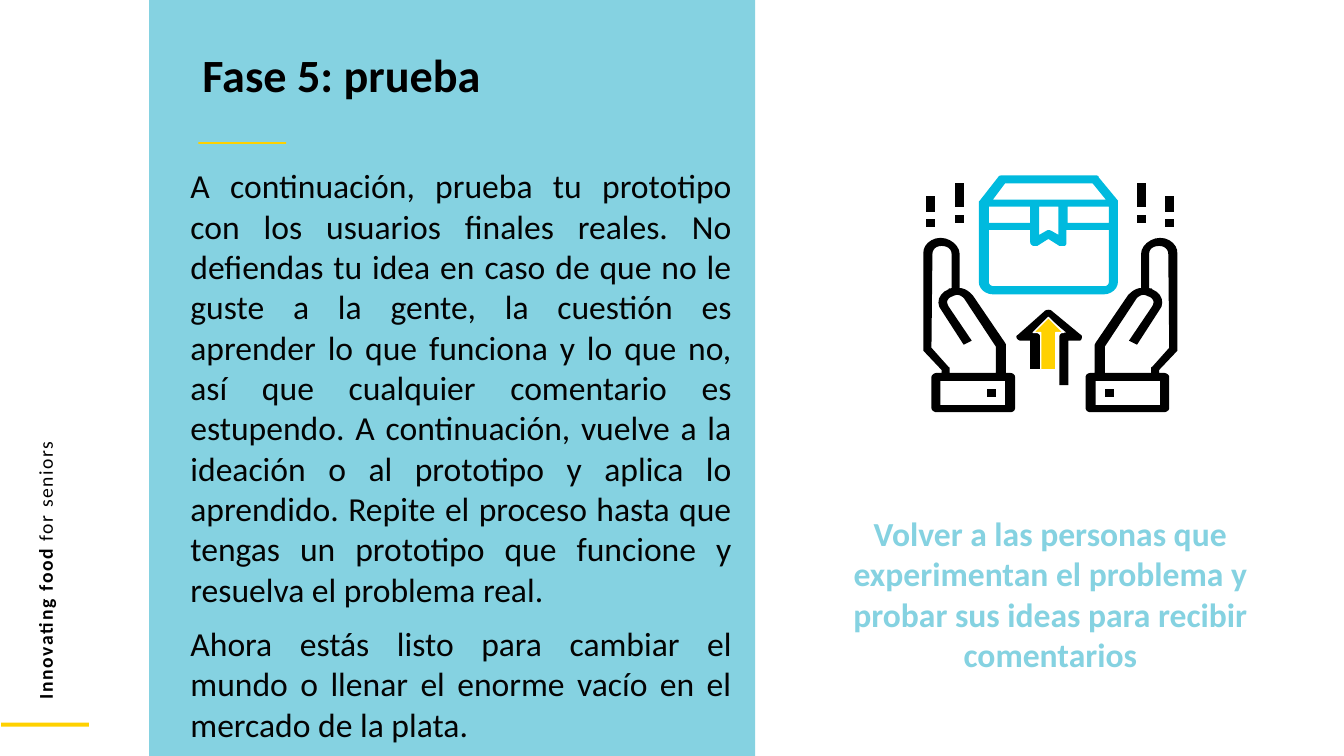
from dataclasses import dataclass

from pptx import Presentation
from pptx import util as u
from pptx.dml.color import RGBColor
from pptx.enum import shapes, text


@dataclass(frozen=True)
class Theme:
    font: str = "Calibri"
    black: str = "000000"
    ink: str = "030303"
    white: str = "FFFFFF"
    aqua: str = "85D2E1"
    cyan: str = "00BADE"
    yellow: str = "FFD100"
    title: int = 33
    body: int = 24
    side: int = 14


# Icon outlines: x from the icon axis, y from its top, in units of UNIT.
# A pair is a corner; six numbers are a Bézier curve (two controls, end).
UNIT = u.Cm(0.0254)
ICON_X, ICON_Y = u.Cm(26.47), u.Cm(4.42)
CURVE_STEPS = 6


def rect(left, top, right, bottom):
    return [(left, top), (right, top), (right, bottom), (left, bottom)]


BOX = [
    [(67, 25), (48, 2), (48, 0, 46, 0, 44, 0), (-48, 0), (-49, 0, -51, 0, -52, 2),
     (-70, 25), (-71, 26, -71, 26, -71, 27), (-71, 106),
     (-71, 112, -65, 118, -57, 118), (53, 118), (61, 118, 67, 112, 67, 106), (67, 27)],
    [(-45, 8), (42, 8), (55, 24), (-57, 24)],
    [(8, 31), (8, 59), (1, 55), (-1, 54, -3, 54, -4, 55), (-11, 59), (-11, 31)],
    rect(-61, 31, -20, 47),
    rect(17, 31, 58, 47),
    [(58, 106), (58, 108, 56, 110, 54, 110), (-56, 110),
     (-59, 110, -61, 108, -61, 106), (-61, 54), (-20, 54), (-20, 66),
     (-20, 68, -19, 69, -17, 70), (-16, 70, -14, 70, -13, 70), (-2, 63), (9, 70),
     (11, 70, 12, 70, 14, 70), (16, 69, 16, 68, 16, 66), (16, 54), (58, 54)],
]
ARROW = [
    [(1, 134), (0, 133, -3, 133, -5, 134), (-32, 158), (-34, 159, -34, 160, -33, 162),
     (-32, 163, -31, 164, -29, 164), (-20, 164), (-20, 192), (-10, 192), (-10, 160),
     (-10, 158, -13, 156, -15, 156), (-17, 156), (-1, 142), (16, 156), (13, 156),
     (11, 156, 9, 158, 9, 160), (9, 208), (18, 208), (18, 164), (27, 164),
     (29, 164, 31, 164, 31, 162), (32, 160, 31, 158, 30, 158)],
]
HAND = [
    [(109, 62), (99, 62, 90, 70, 90, 78), (90, 112), (88, 112),
     (83, 113, 80, 116, 77, 119), (45, 166), (44, 168), (44, 196), (40, 196),
     (37, 196, 35, 198, 35, 200), (35, 231), (35, 233, 37, 235, 40, 235), (113, 235),
     (115, 235, 118, 233, 118, 231), (118, 200), (118, 198, 115, 196, 113, 196),
     (108, 196), (108, 193), (126, 174), (126, 78), (127, 70, 119, 62, 109, 62)],
    rect(45, 204, 109, 228),
    [(118, 171), (101, 190), (100, 190, 100, 191, 100, 192), (100, 196), (54, 196),
     (54, 170), (85, 123), (86, 121, 88, 120, 90, 119), (93, 118, 95, 119, 97, 120),
     (100, 121, 101, 122, 102, 124), (103, 126, 102, 128, 101, 130), (78, 164),
     (86, 168), (108, 134), (114, 127, 111, 117, 101, 113),
     (101, 112, 100, 112, 98, 112), (98, 78), (98, 73, 102, 70, 108, 70),
     (113, 70, 117, 73, 117, 78)],
]
MARKS = [rect(86, 8, 95, 31), rect(86, 39, 95, 47),
         rect(114, 20, 123, 36), rect(114, 43, 123, 51)]
BUTTON = rect(54, 212, 63, 220)


def flatten(contour, side):
    """Return slide points of a contour; side -1 mirrors it about the icon axis."""
    pts = []
    for step in contour:
        if len(step) == 2:
            pts.append(step)
            continue
        x0, y0 = pts[-1]
        x1, y1, x2, y2, x3, y3 = step
        for i in range(1, CURVE_STEPS + 1):
            t = i / CURVE_STEPS
            a, b, c, d = (1 - t) ** 3, 3 * t * (1 - t) ** 2, 3 * t * t * (1 - t), t ** 3
            pts.append((a * x0 + b * x1 + c * x2 + d * x3,
                        a * y0 + b * y1 + c * y2 + d * y3))
    return [(ICON_X + side * x * UNIT, ICON_Y + y * UNIT) for x, y in pts]


class Deck:
    def __init__(self, theme):
        self.theme = theme
        self.prs = Presentation()
        self.prs.slide_width, self.prs.slide_height = u.Cm(33.87), u.Cm(19.05)
        self.s = self.prs.slides.add_slide(self.prs.slide_layouts[6])

    def paint(self, sp, fill, line=None):
        sp.shadow.inherit = False
        sp.fill.solid()
        sp.fill.fore_color.rgb = RGBColor.from_string(fill)
        if line:
            sp.line.color.rgb = RGBColor.from_string(line)
            sp.line.width = u.Pt(1)
        else:
            sp.line.fill.background()

    def shape(self, box, fill, kind=shapes.MSO_SHAPE.RECTANGLE, line=None):
        sp = self.s.shapes.add_shape(kind, *map(u.Cm, box))
        self.paint(sp, fill, line)

    def outline(self, contours, fill, side=1):
        """Draw one freeform; inner contours become holes."""
        first, *holes = [flatten(c, side) for c in contours]
        fb = self.s.shapes.build_freeform(*first[0])
        fb.add_line_segments(first[1:], close=True)
        for hole in holes:
            fb.move_to(*hole[0])
            fb.add_line_segments(hole[1:], close=True)
        self.paint(fb.convert_to_shape(), fill)

    def text(self, box, paragraphs, size, color, bold=False, align=text.PP_ALIGN.LEFT):
        sp = self.s.shapes.add_textbox(*map(u.Cm, box))
        tf = sp.text_frame
        tf.word_wrap = True
        tf.text = "\n".join(paragraphs)
        for i, p in enumerate(tf.paragraphs):
            p.alignment = align
            if i:
                p.space_before = u.Pt(10)
            for r in p.runs:
                self.style(r, size, color, bold)
        return sp

    def style(self, r, size, color, bold):
        r.font.name = self.theme.font
        r.font.size = u.Pt(size)
        r.font.bold = bold
        r.font.color.rgb = RGBColor.from_string(color)

    def side_label(self, box, strong, plain):
        """Upward text whose first part is bold, with spaced letters."""
        t = self.theme
        sp = self.text(box, [strong], t.side, t.black, bold=True)
        sp.rotation = 270
        p = sp.text_frame.paragraphs[0]
        r = p.add_run()
        r.text = plain
        self.style(r, t.side, t.black, False)
        for r in p.runs:
            r.font._element.set("spc", "110")


def main():
    t = Theme()
    d = Deck(t)
    d.shape((3.76, 0, 15.27, 19.05), t.aqua)
    d.shape((0.03, 18.21, 2.21, 0.1), t.yellow)
    d.shape((5, 3.58, 2.21, 0.05), t.yellow)
    d.side_label((-8.43, 7.87, 19.15, 0.86), "Innovating food ", "for seniors")

    body = d.text((3.91, 4.04, 14.78, 15.01), [
        "A continuación, prueba tu prototipo con los usuarios finales reales. "
        "No defiendas tu idea en caso de que no le guste a la gente, la cuestión es "
        "aprender lo que funciona y lo que no, así que cualquier comentario es "
        "estupendo. A continuación, vuelve a la ideación o al prototipo y aplica lo "
        "aprendido. Repite el proceso hasta que tengas un prototipo que funcione y "
        "resuelva el problema real.",
        "Ahora estás listo para cambiar el mundo o llenar el enorme vacío en el "
        "mercado de la plata.",
    ], t.body, t.ink, align=text.PP_ALIGN.JUSTIFY)
    body.text_frame.margin_left = u.Cm(0.89)

    title = d.text((4.85, 1.19, 14.17, 2.29), ["Fase 5: prueba"], t.title, t.black, bold=True)
    title.text_frame.paragraphs[0].line_spacing = 0.9
    d.text((21.06, 12.8, 10.82, 4.37),
           ["Volver a las personas que experimentan el problema y probar sus ideas "
            "para recibir comentarios"],
           t.body, t.aqua, bold=True, align=text.PP_ALIGN.CENTER)

    d.outline(BOX, t.cyan)
    d.outline(ARROW, t.black)
    for side in (1, -1):
        d.outline(HAND, t.black, side)
        for block in MARKS + [BUTTON]:
            d.outline([block], t.black, side)
    d.shape((26.04, 8, 0.76, 1.32), t.yellow, shapes.MSO_SHAPE.UP_ARROW, t.white)
    d.prs.save("out.pptx")


if __name__ == "__main__":
    main()
